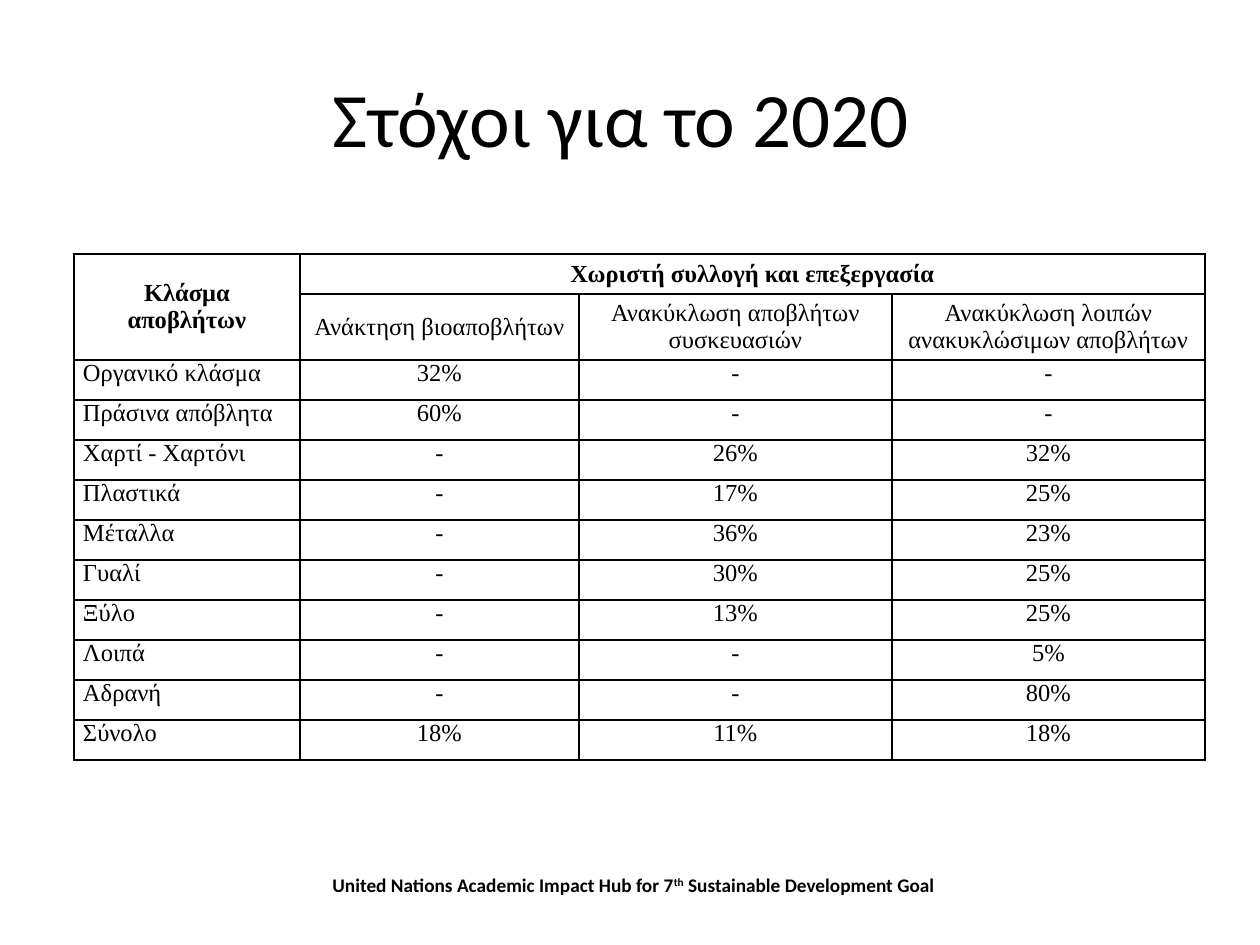
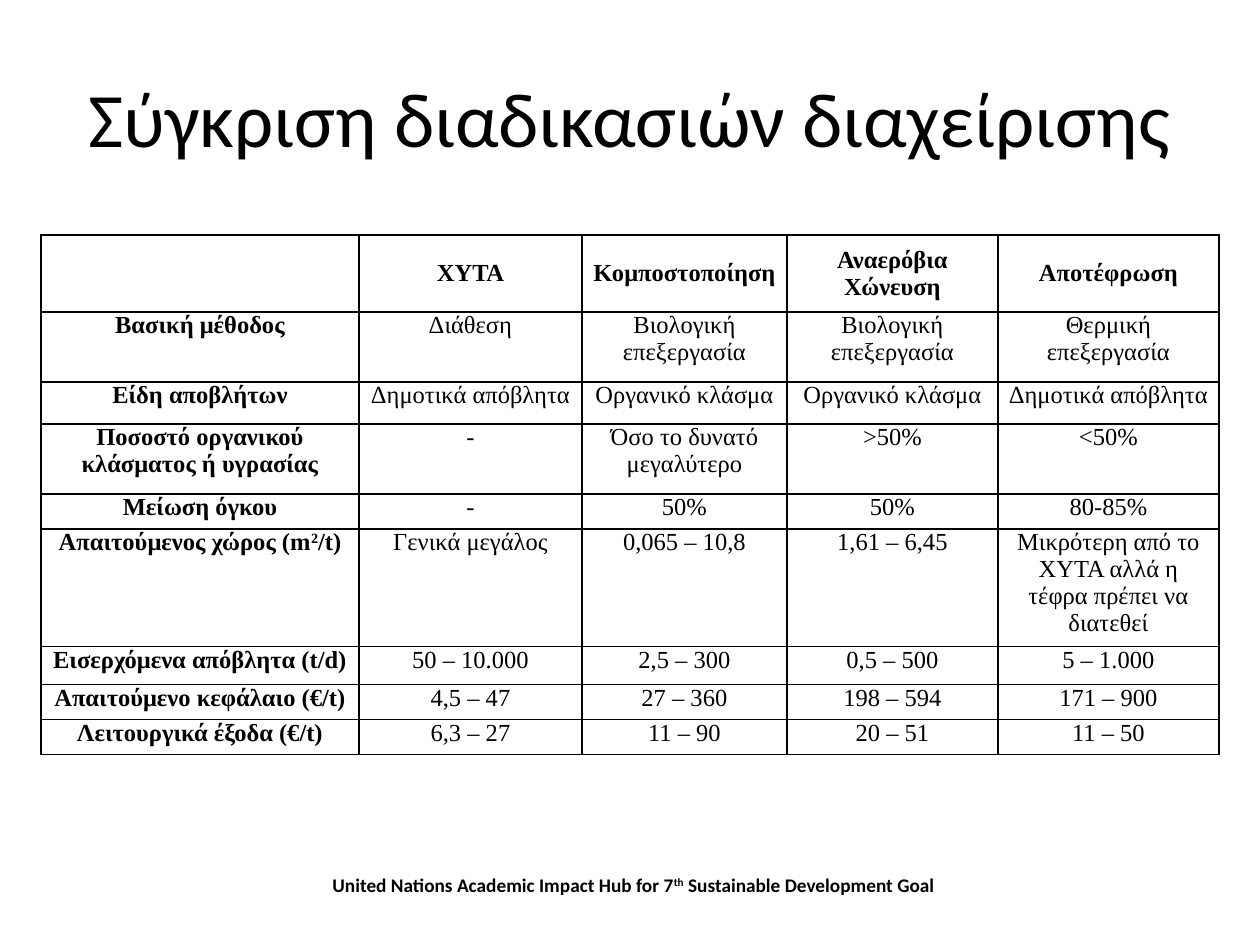
from lxml import etree
from pptx import Presentation
from pptx.dml.color import RGBColor
from pptx.enum.text import MSO_ANCHOR, MSO_AUTO_SIZE, PP_ALIGN
from pptx.oxml.ns import qn
from pptx.util import Emu, Pt

LEFT, CENTER = PP_ALIGN.LEFT, PP_ALIGN.CENTER
TOP, MIDDLE = MSO_ANCHOR.TOP, MSO_ANCHOR.MIDDLE
FIXED, GROW = MSO_AUTO_SIZE.NONE, MSO_AUTO_SIZE.SHAPE_TO_FIT_TEXT

SCALE = 914400 / 126  # EMU in one px
COLORS = {"ink": "000000", "paper": "FFFFFF"}
FONTS = {
    "title": {"name": "Calibri", "size": Pt(44), "bold": False},
    "foot": {"name": "Calibri", "size": Pt(11), "bold": True},
    "head": {"name": "Times New Roman", "size": Pt(14), "bold": True},
    "cell": {"name": "Times New Roman", "size": Pt(14), "bold": False},
}
FOOTER = "United Nations Academic Impact Hub for 7^th^ Sustainable Development Goal"


def px(n):
    return Emu(round(n * SCALE))


def apply(item, values):
    for key, value in values.items():
        setattr(item, key, value)


class Deck:
    def __init__(self):
        self.prs = Presentation()
        apply(self.prs, {"slide_width": px(1260), "slide_height": px(945)})
        self.slide = None

    def page(self, title):
        self.slide = self.prs.slides.add_slide(self.prs.slide_layouts[5])
        fill = self.slide.background.fill
        fill.solid()
        fill.fore_color.rgb = RGBColor.from_string(COLORS["paper"])
        self.title(title)
        self.footer()

    def label(self, frame, text, font, align):
        """Put text in the first paragraph; ^marks^ enclose superscript."""
        para = frame.paragraphs[0]
        para.alignment = align
        for i, part in enumerate(text.split("^")):
            if part:
                run = para.add_run()
                run.text = part
                apply(run.font, FONTS[font])
                run.font.color.rgb = RGBColor.from_string(COLORS["ink"])
                if i % 2:
                    run.font._element.set("baseline", "30000")

    def title(self, text):
        shape = self.slide.shapes.title
        apply(shape, {"left": px(63), "top": px(38),
                      "width": px(1134), "height": px(157)})
        frame = shape.text_frame
        apply(frame, {"vertical_anchor": MIDDLE, "word_wrap": True,
                      "auto_size": FIXED})
        self.label(frame, text, "title", CENTER)

    def footer(self):
        box = self.slide.shapes.add_textbox(px(320), px(867), px(655), px(36))
        apply(box.text_frame, {"word_wrap": True, "auto_size": GROW})
        self.label(box.text_frame, FOOTER, "foot", LEFT)

    def border(self, cell):
        props = cell._tc.get_or_add_tcPr()
        for side in ("lnL", "lnR", "lnT", "lnB"):
            line = etree.SubElement(props, qn("a:" + side), w=str(Pt(1)))
            fill = etree.SubElement(line, qn("a:solidFill"))
            etree.SubElement(fill, qn("a:srgbClr"), val=COLORS["ink"])

    def table(self, left, top, cols, rows, data, style, merges=()):
        """Draw a grid; style(row, col) gives font, alignment and anchor."""
        grid = self.slide.shapes.add_table(
            len(rows), len(cols), px(left), px(top),
            px(sum(cols)), px(sum(rows))).table
        apply(grid, {"first_row": False, "horz_banding": False})
        for col, width in zip(grid.columns, cols):
            col.width = px(width)
        for row, height in zip(grid.rows, rows):
            row.height = px(height)
        for r, line in enumerate(data):
            for c, text in enumerate(line):
                cell = grid.cell(r, c)
                font, align, anchor = style(r, c)
                self.border(cell)
                cell.fill.background()
                apply(cell, {"margin_left": px(9), "margin_right": px(9),
                             "margin_top": 0, "margin_bottom": 0,
                             "vertical_anchor": anchor})
                self.label(cell.text_frame, text, font, align)
        for start, end in merges:
            grid.cell(*start).merge(grid.cell(*end))


# Table content
GOALS = [
    ["Κλάσμα αποβλήτων", "Χωριστή συλλογή και επεξεργασία", "", ""],
    ["", "Ανάκτηση βιοαποβλήτων", "Ανακύκλωση αποβλήτων συσκευασιών",
     "Ανακύκλωση λοιπών ανακυκλώσιμων αποβλήτων"],
    ["Οργανικό κλάσμα", "32%", "-", "-"],
    ["Πράσινα απόβλητα", "60%", "-", "-"],
    ["Χαρτί - Χαρτόνι", "-", "26%", "32%"],
    ["Πλαστικά", "-", "17%", "25%"],
    ["Μέταλλα", "-", "36%", "23%"],
    ["Γυαλί", "-", "30%", "25%"],
    ["Ξύλο", "-", "13%", "25%"],
    ["Λοιπά", "-", "-", "5%"],
    ["Αδρανή", "-", "-", "80%"],
    ["Σύνολο", "18%", "11%", "18%"],
]
METHODS = [
    ["", "ΧΥΤΑ", "Κομποστοποίηση", "Αναερόβια Χώνευση", "Αποτέφρωση"],
    ["Βασική μέθοδος", "Διάθεση", "Βιολογική επεξεργασία",
     "Βιολογική επεξεργασία", "Θερμική επεξεργασία"],
    ["Είδη αποβλήτων", "Δημοτικά απόβλητα", "Οργανικό κλάσμα",
     "Οργανικό κλάσμα", "Δημοτικά απόβλητα"],
    ["Ποσοστό οργανικού κλάσματος ή υγρασίας", "-",
     "Όσο το δυνατό μεγαλύτερο", ">50%", "<50%"],
    ["Μείωση όγκου", "-", "50%", "50%", "80-85%"],
    ["Απαιτούμενος χώρος (m^2^/t)", "Γενικά μεγάλος", "0,065 – 10,8",
     "1,61 – 6,45", "Μικρότερη από το ΧΥΤΑ αλλά η τέφρα πρέπει να διατεθεί"],
    ["Εισερχόμενα απόβλητα (t/d)", "50 – 10.000", "2,5 – 300", "0,5 – 500",
     "5 – 1.000"],
    ["Απαιτούμενο κεφάλαιο (€/t)", "4,5 – 47", "27 – 360", "198 – 594",
     "171 – 900"],
    ["Λειτουργικά έξοδα (€/t)", "6,3 – 27", "11 – 90", "20 – 51", "11 – 50"],
]


def goal_style(r, c):
    return ("head" if r == 0 else "cell",
            LEFT if r > 1 and c == 0 else CENTER,
            MIDDLE if r < 2 else TOP)


def method_style(r, c):
    return ("head" if r == 0 or c == 0 else "cell", CENTER,
            MIDDLE if r == 0 else TOP)


def main():
    deck = Deck()

    # Targets by waste fraction
    deck.page("Στόχοι για το 2020 ")
    deck.table(74, 254, [226, 279, 313, 313], [40, 66] + [40] * 10, GOALS,
               goal_style, [((0, 0), (1, 0)), ((0, 1), (0, 3))])

    # Comparison of treatment methods
    deck.page("Σύγκριση διαδικασιών διαχείρισης")
    deck.table(41, 235, [318, 223, 205, 211, 221],
               [77, 70, 42, 70, 35, 105, 38, 35, 35], METHODS, method_style)

    deck.prs.save("out.pptx")


if __name__ == "__main__":
    main()
